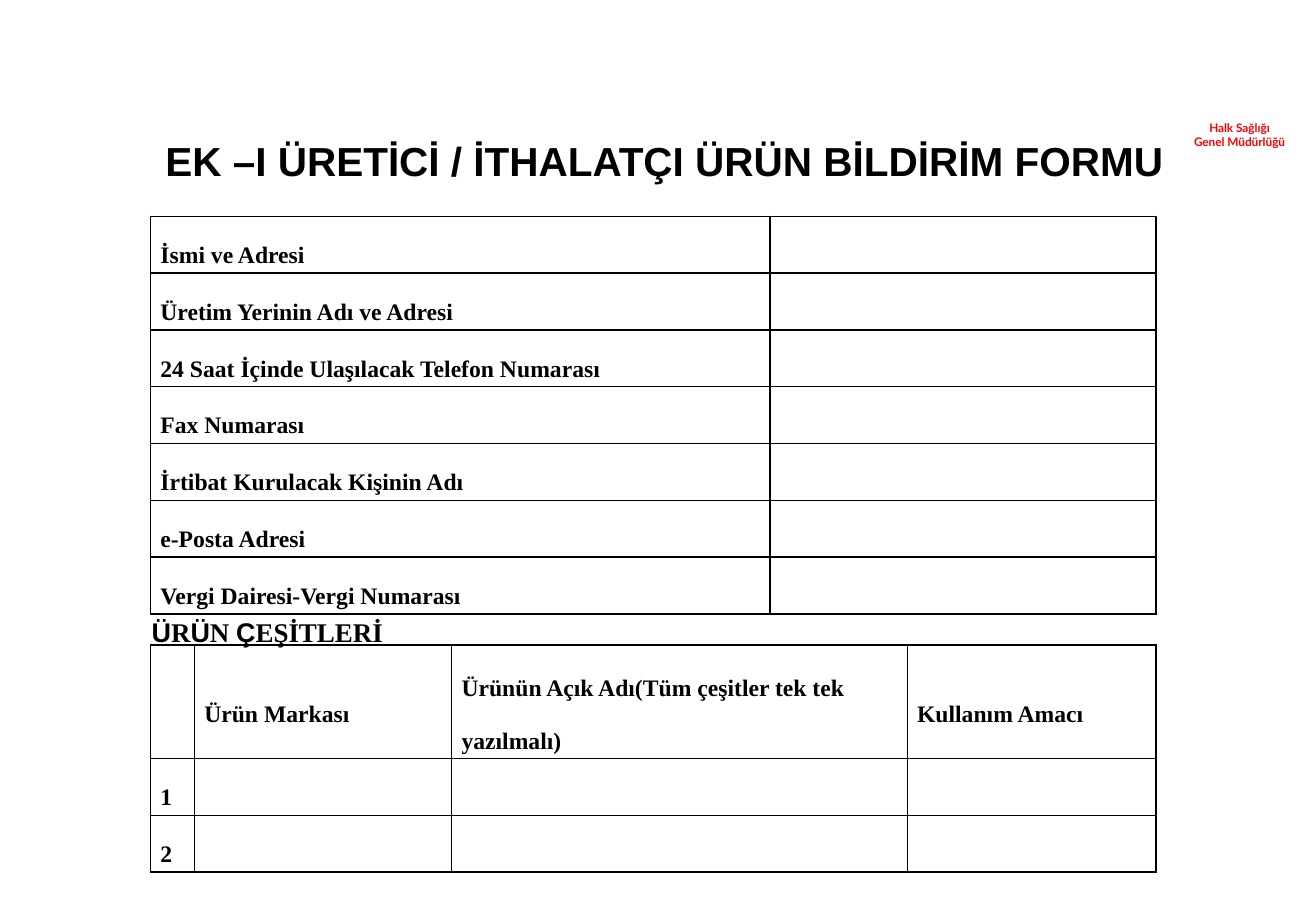
from pptx import Presentation
from pptx.dml.color import RGBColor
from pptx.enum.text import MSO_ANCHOR as Anchor, PP_ALIGN as Align
from pptx.oxml import parse_xml
from pptx.oxml.ns import nsdecls
from pptx.util import Pt

SANS, SERIF, LABEL = "Arial", "Times New Roman", "Lato"
LEFT = 89.3
ROW = 33.6


def color(code):
    return RGBColor.from_string(code)


def write(para, text, font=SERIF, size=14, ink="000000", bold=True):
    span = para.add_run()
    span.text = text
    span.font.name = font
    span.font.size = Pt(size)
    span.font.bold = bold
    span.font.color.rgb = color(ink)


class FormPage:
    def __init__(self, deck):
        self.page = deck.slides.add_slide(deck.slide_layouts[6])
        self.border = "000000"
        self.border_width = Pt(1)

    def text(self, left, top, width, height, lines, align=Align.LEFT,
             anchor=Anchor.TOP, inset=(7.2, 3.6), fill=None, **style):
        """Add a text box; each line is a list of (text, font) spans."""
        box = self.page.shapes.add_textbox(Pt(left), Pt(top), Pt(width), Pt(height))
        frame = box.text_frame
        frame.word_wrap = True
        frame.vertical_anchor = anchor
        frame.margin_left = frame.margin_right = Pt(inset[0])
        frame.margin_top = frame.margin_bottom = Pt(inset[1])
        if fill:
            box.fill.solid()
            box.fill.fore_color.rgb = color(fill)
        for index, spans in enumerate(lines):
            para = frame.add_paragraph() if index else frame.paragraphs[0]
            para.alignment = align
            for words, font in spans:
                write(para, words, font=font, **style)

    def outline(self, cell):
        properties = cell._tc.get_or_add_tcPr()
        for side in "LRTB":
            properties.append(parse_xml(
                f'<a:ln{side} {nsdecls("a")} w="{self.border_width}"><a:solidFill>'
                f'<a:srgbClr val="{self.border}"/></a:solidFill></a:ln{side}>'))

    def table(self, left, top, widths, heights, rows, middle_rows=()):
        table = self.page.shapes.add_table(
            len(rows), len(widths), Pt(left), Pt(top),
            Pt(sum(widths)), Pt(sum(heights))).table
        table.first_row = table.horz_banding = False
        for column, width in zip(table.columns, widths):
            column.width = Pt(width)
        for index, (row, height, texts) in enumerate(zip(table.rows, heights, rows)):
            row.height = Pt(height)
            for cell, words in zip(row.cells, texts):
                cell.margin_left = cell.margin_right = Pt(5.8)
                cell.margin_top = cell.margin_bottom = 0
                if index in middle_rows:
                    cell.vertical_anchor = Anchor.MIDDLE
                self.outline(cell)
                cell.fill.background()
                if words:
                    para = cell.text_frame.paragraphs[0]
                    para.line_spacing = 2.0
                    write(para, words)


def main():
    deck = Presentation()
    deck.slide_width, deck.slide_height = Pt(780), Pt(540)
    form = FormPage(deck)

    form.text(694, 71.3, 81.4, 17.3,
              [[("Halk Sağlığı", LABEL)], [("Genel Müdürlüğü", LABEL)]],
              align=Align.CENTER, inset=(0, 0), fill="FFFFFF", size=7, ink="FF0000")
    form.text(82.8, 77, 622, 35.3,
              [[("EK –I ÜRETİCİ / İTHALATÇI ÜRÜN BİLDİRİM FORMU", SANS)]],
              align=Align.CENTER, size=24)

    contact_fields = [
        "İsmi ve Adresi",
        "Üretim Yerinin Adı ve Adresi",
        "24 Saat İçinde Ulaşılacak Telefon Numarası",
        "Fax Numarası",
        "İrtibat Kurulacak Kişinin Adı",
        "e-Posta Adresi",
        "Vergi Dairesi-Vergi Numarası",
    ]
    form.table(LEFT, 128.3, [367, 229], [ROW] * len(contact_fields),
               [(field, "") for field in contact_fields])

    product_rows = [
        ("", "Ürün Markası", "Ürünün Açık Adı(Tüm çeşitler tek tek yazılmalı)",
         "Kullanım Amacı"),
        ("1", "", "", ""),
        ("2", "", "", ""),
    ]
    form.table(LEFT, 382.4, [26, 152.5, 270, 147.5], [2 * ROW, ROW, ROW],
               product_rows, middle_rows=(0,))

    form.text(82.8, 360.9, 318, 26.6,
              [[("Ü", SANS), ("R", SERIF), ("Ü", SANS), ("N ", SERIF),
                ("Ç", SANS), ("EŞİTLERİ", SERIF)]],
              anchor=Anchor.MIDDLE, size=16)
    deck.save("out.pptx")


if __name__ == "__main__":
    main()
